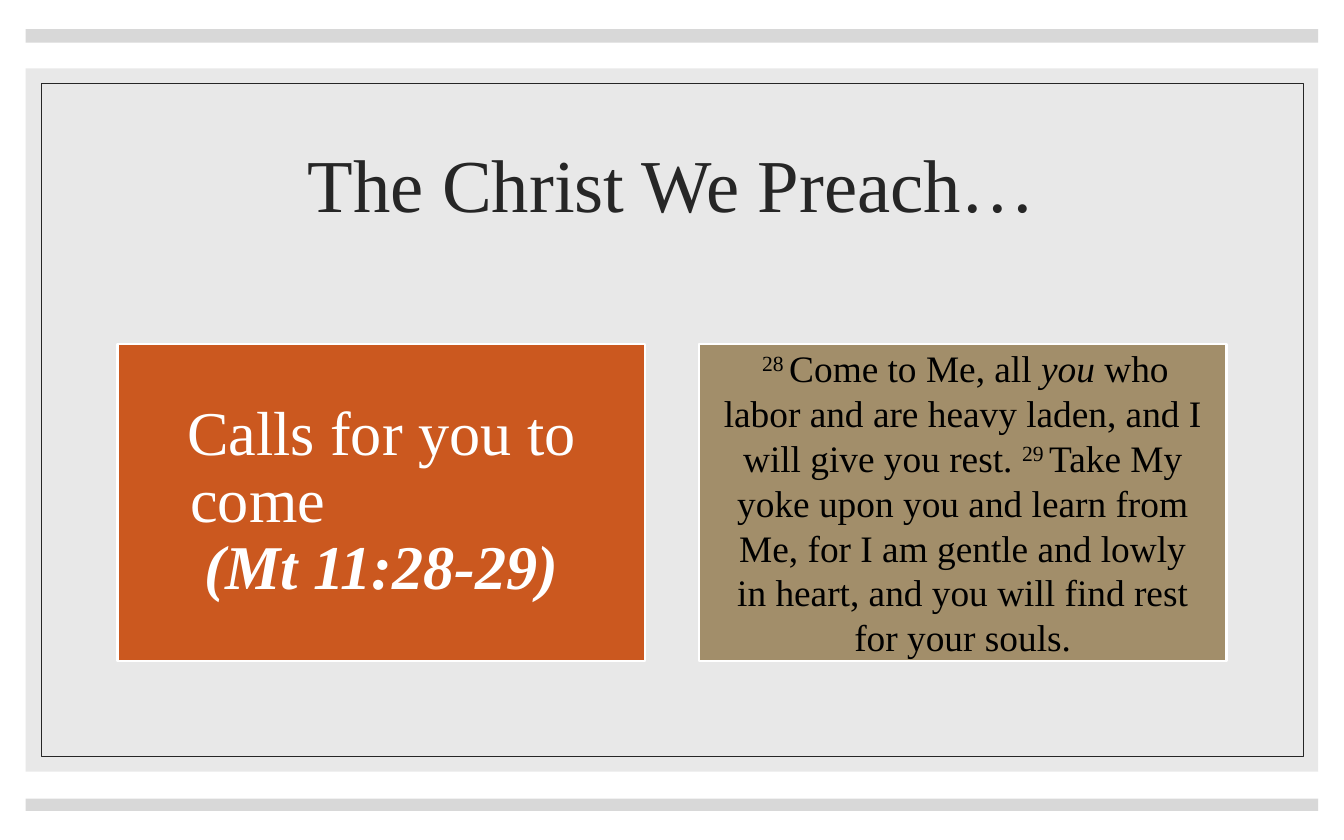
from pptx import Presentation
from pptx.dml.color import RGBColor
from pptx.enum.shapes import MSO_SHAPE as SHAPE
from pptx.enum.text import MSO_ANCHOR as ANCHOR, PP_ALIGN as ALIGN
from pptx.oxml.ns import qn
from pptx.util import Inches, Pt
from lxml.etree import SubElement

# Content: each paragraph is a list of (text, style) runs
TITLE = [[("The Christ We Preach…", "")]]
CALL = [
    [("Calls for you to", "")],
    [("come", "")],
    [("(Mt 11:28-29)", "bold italic")],
]
VERSES = [[
    (" 28 ", "super"),
    ("Come to Me, all ", ""),
    ("you", "italic"),
    (" who labor and are heavy laden, and I will give you rest. ", ""),
    ("29 ", "super"),
    ("Take My yoke upon you and learn from Me, for I am gentle and lowly "
     "in heart, and you will find rest for your souls.", ""),
]]

THEME = {
    "font": "Times New Roman",
    "white": "FFFFFF", "black": "000000", "ink": "262626",
    "bars": "BFBFBF", "panel": "D9D9D9", "call": "CB581F", "verse": "A28E6A",
    "title_size": 48, "call_size": 40, "verse_size": 24,
}
SLIDE_W, SLIDE_H = 12, 7.5
MARGIN = 1.05
CARD_W, CARD_H, CARD_TOP = 4.71, 2.83, 3.07


def color(name):
    return RGBColor.from_string(THEME[name])


def add_rect(left, top, width, height, fill=None, alpha=None, line=None, weight=1):
    sp = slide.shapes.add_shape(SHAPE.RECTANGLE, *map(Inches, (left, top, width, height)))
    sp.shadow.inherit = False
    if fill:
        sp.fill.solid()
        sp.fill.fore_color.rgb = color(fill)
        if alpha:
            clr = sp.fill._xPr.find(qn("a:solidFill"))[0]
            SubElement(clr, qn("a:alpha"), val=str(alpha * 1000))
    else:
        sp.fill.background()
    if line:
        sp.line.color.rgb = color(line)
        sp.line.width = Pt(weight)
    else:
        sp.line.fill.background()
    return sp


def write(sp, paragraphs, size, ink, spacing=None, inset_x=0.1, inset_y=0.05):
    tf = sp.text_frame
    tf.word_wrap = True
    tf.vertical_anchor = ANCHOR.MIDDLE
    tf.margin_left = tf.margin_right = Inches(inset_x)
    tf.margin_top = tf.margin_bottom = Inches(inset_y)
    for i, runs in enumerate(paragraphs):
        p = tf.add_paragraph() if i else tf.paragraphs[0]
        p.alignment = ALIGN.CENTER
        if spacing:
            p.line_spacing = spacing
        for text, style in runs:
            r = p.add_run()
            r.text = text
            font = r.font
            font.name, font.size = THEME["font"], Pt(THEME[size])
            font.color.rgb = color(ink)
            font.bold, font.italic = "bold" in style, "italic" in style
            if "super" in style:
                font._element.set("baseline", "30000")
    return tf


prs = Presentation()
prs.slide_width, prs.slide_height = Inches(SLIDE_W), Inches(SLIDE_H)
slide = prs.slides.add_slide(prs.slide_layouts[6])

# Backdrop: grey bars at top and bottom, white band, panel and thin frame
add_rect(0.23, 0.26, 11.54, 6.98, fill="bars", alpha=60)
add_rect(0, 0.38, SLIDE_W, 6.75, fill="white")
add_rect(0.23, 0.61, 11.54, 6.28, fill="panel", alpha=60)
add_rect(0.37, 0.74, 11.27, 6.01, line="ink", weight=0.5)

# Title
title = slide.shapes.add_textbox(*map(Inches, (MARGIN, 1.01, SLIDE_W - 2 * MARGIN, 1.35)))
write(title, TITLE, "title_size", "ink", spacing=0.9)

# Two cards, one against each margin
call_card, verse_card = [
    add_rect(left, CARD_TOP, CARD_W, CARD_H, fill=fill, line="white", weight=1.5)
    for left, fill in ((MARGIN, "call"), (SLIDE_W - MARGIN - CARD_W, "verse"))
]
tf = write(call_card, CALL, "call_size", "white", spacing=0.9, inset_x=0.17, inset_y=0.17)
write(verse_card, VERSES, "verse_size", "black", inset_x=0.2, inset_y=0)

# The second line of the call starts under the first
p = tf.paragraphs[1]
p.alignment = ALIGN.LEFT
p._p.get_or_add_pPr().set("marL", str(Inches(0.48)))

prs.save("out.pptx")
